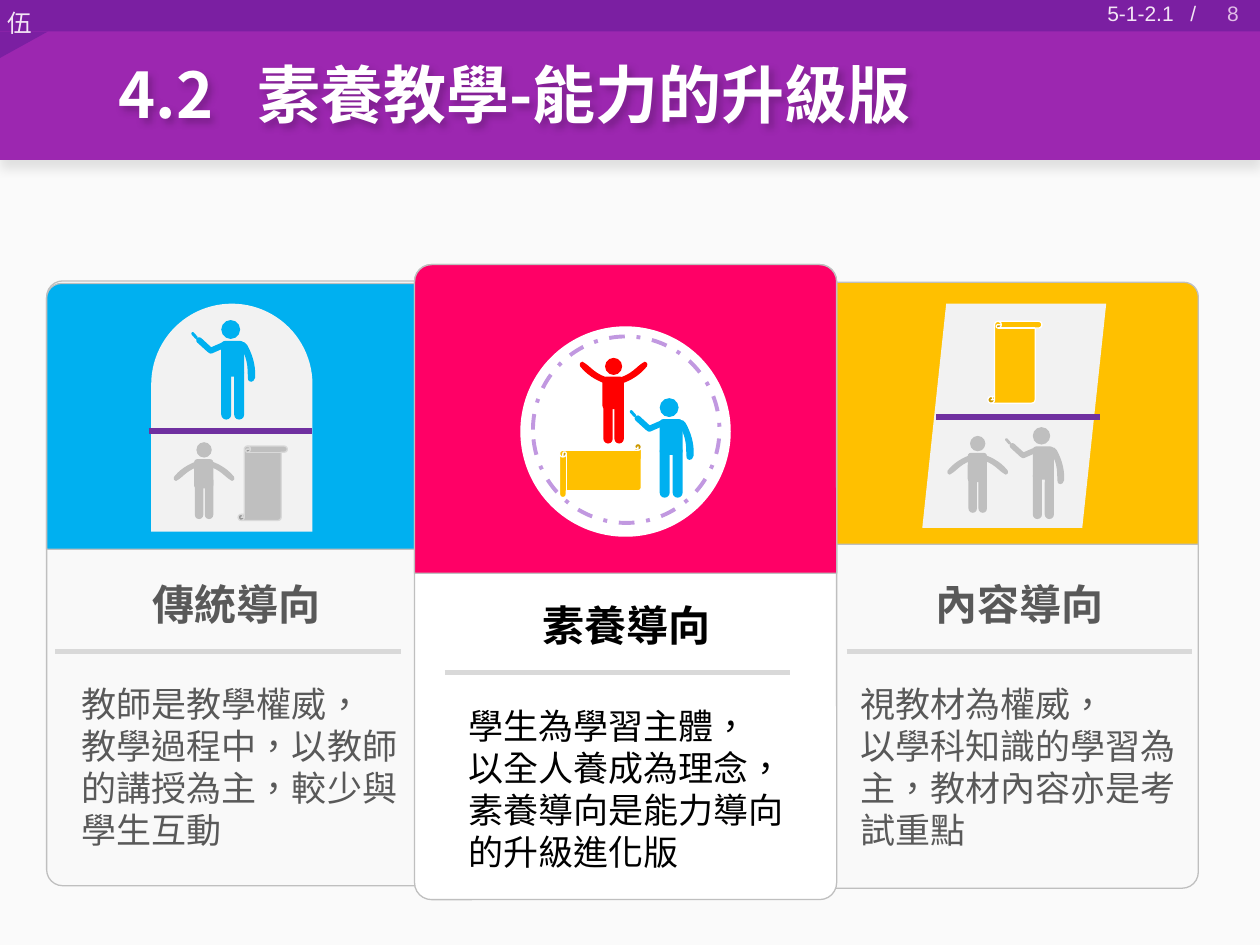
from lxml.etree import SubElement
from pptx import Presentation
from pptx.dml.color import RGBColor
from pptx.enum.dml import MSO_LINE
from pptx.enum.lang import MSO_LANGUAGE_ID as Language
from pptx.enum.shapes import MSO_CONNECTOR, MSO_SHAPE as Preset
from pptx.enum.text import MSO_ANCHOR as Anchor, MSO_AUTO_SIZE, PP_ALIGN as Align
from pptx.oxml.ns import qn
from pptx.util import Inches, Pt

COLORS = {
    "paper": "FAFAFA", "white": "FFFFFF", "banner": "9C27B0", "strip": "7B1FA2",
    "pale": "F3E5F5", "number": "E1BEE7", "card": "F9F9F9", "border": "BFBFBF",
    "rule": "D9D9D9", "panel": "F2F2F2", "text": "595959", "black": "000000",
    "blue": "00B0F0", "amber": "FFC000", "pink": "FF0066", "red": "FF0000",
    "divider": "7030A0", "ring": "C198E0",
}
WIDTH, HEIGHT = Inches(10), Inches(7.5)
CELL = WIDTH / 100
CJK = "Noto Sans CJK SC"

# Shares of a figure's height, measured from its middle and top
STUDENT_PARTS = [
    (Preset.FLOWCHART_CONNECTOR, (-.1, 0, .2, .2), 0),
    (Preset.ROUNDED_RECTANGLE, (-.13, .22, .25, .38), 0),
    (Preset.ROUNDED_RECTANGLE, (.01, .44, .11, .56), 0),
    (Preset.ROUNDED_RECTANGLE, (-.12, .44, .11, .56), 0),
]
TEACHER_PARTS = [
    (Preset.FLOWCHART_CONNECTOR, (-.1, 0, .19, .19), 0),
    (Preset.ROUNDED_RECTANGLE, (-.1, .21, .23, .36), 0),
    (Preset.ROUNDED_RECTANGLE, (.03, .48, .1, .52), 0),
    (Preset.ROUNDED_RECTANGLE, (-.1, .48, .1, .52), 0),
    (Preset.ROUNDED_RECTANGLE, (-.3, .15, .06, .2), 312.3),
    (Preset.ROUNDED_RECTANGLE, (-.17, .18, .06, .2), 66.4),
    (Preset.ROUNDED_RECTANGLE, (-.41, .14, .08, .03), 48.6),
]
RAISED_ARM = [
    (.04, .24), (.01, .25), (.01, .26), (.01, .28), (.01, .31), (.05, .31), (.07, .31),
    (.29, .24), (.37, .12), (.39, .1), (.39, .09), (.4, .07), (.39, .06),
    (.37, .04), (.36, .04), (.34, .06), (.27, .1), (.21, .2), (.04, .24),
]
TEACHER_ARM = [
    (.1, .28), (.08, .25), (.08, .23), (.1, .22), (.12, .21), (.15, .23), (.16, .25),
    (.26, .43), (.24, .57), (.24, .58), (.23, .61), (.22, .62), (.2, .62),
    (.19, .62), (.17, .61), (.17, .6), (.16, .5), (.18, .42), (.1, .28),
]


def rgb(name):
    """Return the named colour."""
    return RGBColor.from_string(COLORS[name])


def cells(*values):
    """Turn grid cells into slide lengths."""
    return [round(value * CELL) for value in values]


def paint(shape, fill=None, line=None, weight=.75):
    """Set fill and outline and take the shadow off."""
    shape.shadow.inherit = False
    if fill:
        shape.fill.solid()
        shape.fill.fore_color.rgb = rgb(fill)
    else:
        shape.fill.background()
    if line:
        shape.line.color.rgb = rgb(line)
        shape.line.width = Pt(weight)
    else:
        shape.line.fill.background()
    return shape


def add_shape(canvas, preset, box, fill=None, adjust=(), turn=0, **outline):
    """Add a painted preset shape on the grid."""
    shape = paint(canvas.add_shape(preset, *cells(*box)), fill, **outline)
    for index, value in enumerate(adjust):
        shape.adjustments[index] = value
    shape.rotation = turn
    return shape


def add_line(canvas, start, end, color):
    """Add a straight 3 pt line."""
    line = canvas.add_connector(MSO_CONNECTOR.STRAIGHT, *cells(*start, *end))
    line.line.color.rgb = rgb(color)
    line.line.width = Pt(3)
    SubElement(line.element.spPr, qn("a:effectLst"))


def add_shadow(shape, alpha, blur, distance, angle):
    """Give a shape a soft black shadow."""
    shape.shadow.inherit = False
    effects = shape.element.spPr.find(qn("a:effectLst"))
    outer = SubElement(effects, qn("a:outerShdw"), blurRad=str(Pt(blur)), dist=str(Pt(distance)),
                       dir=str(angle * 60000), algn="t", rotWithShape="0")
    black = SubElement(outer, qn("a:srgbClr"), val=COLORS["black"])
    SubElement(black, qn("a:alpha"), val=str(alpha * 1000))


def write(shape, text, size, color, font=CJK, bold=False, align=Align.LEFT,
          anchor=Anchor.TOP, wrap=True, tab=None):
    """Write formatted paragraphs into a shape, with an optional tab stop in cells."""
    frame = shape.text_frame
    frame.word_wrap, frame.vertical_anchor = wrap, anchor
    frame.auto_size = MSO_AUTO_SIZE.NONE
    frame.text = text
    for para in frame.paragraphs:
        para.alignment, para.line_spacing = align, Pt(round(size * 1.2))
        if tab:
            stops = SubElement(para._p.get_or_add_pPr(), qn("a:tabLst"))
            SubElement(stops, qn("a:tab"), pos=str(round(tab * CELL)), algn="l")
        for span in para.runs:
            span.font.name, span.font.size, span.font.bold = font, Pt(size), bold
            span.font.color.rgb = rgb(color)
            span.font.language_id = Language.TRADITIONAL_CHINESE
            SubElement(span.font._element, qn("a:ea"), typeface=font)


def add_text(canvas, box, text, size, color, **style):
    """Add a text box on the grid."""
    write(canvas.add_textbox(*cells(*box)), text, size, color, **style)


def add_outline(canvas, points, fill, curved=False):
    """Add a closed outline; a curved one takes its points in threes as Bézier knots."""
    corners = [cells(*point) for point in points]
    builder = canvas.build_freeform(*corners[0])
    builder.add_line_segments(corners[1:])
    shape = paint(builder.convert_to_shape(), fill)
    if curved:
        sides = list(shape.element.iter(qn("a:lnTo")))[:len(points) - 1]
        for first in range(0, len(sides), 3):
            curve = SubElement(sides[first].getparent(), qn("a:cubicBezTo"))
            sides[first].addprevious(curve)
            for side in sides[first:first + 3]:
                curve.append(side[0])
                side.getparent().remove(side)


def add_figure(canvas, middle, top, height, color, parts, arms):
    """Draw a person of the given height around a middle line."""
    for preset, (x, y, w, h), turn in parts:
        adjust = (.5,) if w < .12 else ()
        box = (middle + x * height, top + y * height, w * height, h * height)
        add_shape(canvas, preset, box, color, adjust, turn)
    for arm in arms:
        points = [(middle + x * height, top + y * height) for x, y in arm]
        add_outline(canvas, points, color, curved=True)


def add_student(canvas, middle, top, height, color, raised=False):
    """Draw a student with arms raised or lowered."""
    arm = RAISED_ARM if raised else [(x, .55 - y) for x, y in RAISED_ARM]
    arms = [[(side * x, y) for x, y in arm] for side in (-1, 1)]
    add_figure(canvas, middle, top, height, color, STUDENT_PARTS, arms)


def add_teacher(canvas, middle, top, height, color):
    """Draw a teacher holding a pointer."""
    add_figure(canvas, middle, top, height, color, TEACHER_PARTS, [TEACHER_ARM])


def draw_tradition(canvas, x, y):
    """Draw the teacher above a student and a scroll."""
    add_shape(canvas, Preset.ROUND_2_SAME_RECTANGLE, (x + 8.3, y + 1.8, 12.8, 18.1), "panel", (.5, 0))
    add_student(canvas, x + 12.5, y + 12.8, 6.1, "border")
    add_shape(canvas, Preset.VERTICAL_SCROLL, (x + 15.2, y + 13.1, 3.9, 5.9), "border", line="rule")
    add_teacher(canvas, x + 14.65, y + 3.1, 7.9, "blue")
    add_line(canvas, (x + 8.1, y + 11.9), (x + 21.1, y + 11.9), "divider")


def draw_content(canvas, x, y):
    """Draw the scroll above a student and a teacher."""
    add_shape(canvas, Preset.PARALLELOGRAM, (x + 10, y + 1.6, 14.6, 17.8), "panel", (.13,))
    add_shape(canvas, Preset.VERTICAL_SCROLL, (x + 15.2, y + 3, 4.3, 6.5), "amber", line="white")
    add_teacher(canvas, x + 19.5, y + 11.4, 7.3, "border")
    add_student(canvas, x + 14.4, y + 12.1, 6.1, "border")
    add_line(canvas, (x + 11.1, y + 10.6), (x + 24.1, y + 10.6), "divider")


def draw_literacy(canvas, x, y):
    """Draw student, teacher and scroll together in a ring."""
    add_shape(canvas, Preset.OVAL, (x + 8.4, y + 4.9, 16.7, 16.7), "white")
    scroll = add_shape(canvas, Preset.VERTICAL_SCROLL, (x + 12.6, y + 13.1, 4.3, 6.5),
                       "amber", turn=270, line="white")
    scroll.element.spPr.find(qn("a:xfrm")).set("flipH", "1")
    add_student(canvas, x + 15.8, y + 7.4, 6.8, "red", raised=True)
    add_teacher(canvas, x + 20.25, y + 10.6, 7.9, "blue")
    ring = add_shape(canvas, Preset.OVAL, (x + 9.4, y + 5.7, 14.8, 14.8), line="ring", weight=2.25)
    ring.line.dash_style = MSO_LINE.DASH_DOT


def add_card(page, box, header, fill, title, body, draw, heading, margin, indent,
             back="card", color="text"):
    """Place a card: header picture, heading, rule and body text."""
    canvas = page.shapes.add_group_shape().shapes
    x, y, w, h = box
    drop, depth = header
    across, down = heading
    top, left = y + down, x + margin
    add_shape(canvas, Preset.ROUNDED_RECTANGLE, box, back, (.04,), line="border")
    add_shape(canvas, Preset.ROUND_2_SAME_RECTANGLE, (x, y + drop, w, depth), fill, (.055, 0), line="border")
    draw(canvas, x, y)
    add_text(canvas, (x + across, top, 15.5, 5), title, 24, color, bold=True, align=Align.CENTER, wrap=False)
    add_line(canvas, (left, top + 6.3), (left + 27.4, top + 6.3), "rule")
    add_text(canvas, (x + indent, top + 8.3, 28.6, 14.5), body, 20, color)


def add_banner(page, title, chapter, code, number):
    """Place the backdrop, the banner and its labels."""
    canvas = page.shapes
    add_shape(canvas, Preset.RECTANGLE, (0, 4.4, 100, 70.6), "paper")
    band = add_shape(canvas, Preset.RECTANGLE, (0, 0, 100, 12.7), "banner")
    add_shadow(band, 10, 6, 4, 90)
    add_shape(canvas, Preset.RECTANGLE, (0, 0, 100, 2.5), "strip")
    add_outline(canvas, [(0, 2.5), (0, 4.6), (3.8, 2.5)], "strip")
    add_text(canvas, (-.4, .1, 4, 3.4), chapter, 14, "pale", wrap=False)
    add_text(canvas, (76, -.9, 23.3, 4), number, 12, "number", font="Arial",
             align=Align.RIGHT, anchor=Anchor.MIDDLE)
    add_text(canvas, (86.9, -.4, 9.6, 3), code, 12, "pale", font="Arial", tab=6.6)
    heading = canvas.title
    heading.left, heading.top, heading.width, heading.height = cells(8.4, 2.1, 86.5, 10.6)
    write(heading, title, 36, "white", bold=True, anchor=Anchor.MIDDLE, tab=11)
    add_shadow(heading, 20, 4, 3, 45)
    canvas.element.append(heading.element)


def main():
    """Build the deck."""
    deck = Presentation()
    deck.slide_width, deck.slide_height = WIDTH, HEIGHT
    page = deck.slides.add_slide(deck.slide_layouts[5])
    add_banner(page, "4.2\t素養教學-能力的升級版", "伍", "5-1-2.1\t/", "8")
    add_card(page, (63.2, 22.5, 31.9, 48), (-.1, 20.8), "amber", "內容導向",
             "視教材為權威，\n以學科知識的學習為主，教材內容亦是考試重點",
             draw_content, heading=(10, 22.9), margin=4, indent=4.1)
    add_card(page, (3.7, 22.3, 31.9, 48), (.2, 21.1), "blue", "傳統導向",
             "教師是教學權威，\n教學過程中，以教師的講授為主，較少與學生互動",
             draw_tradition, heading=(7.3, 23.1), margin=.7, indent=1.8)
    add_card(page, (32.9, 21, 33.5, 50.4), (0, 24.5), "pink", "素養導向",
             "學生為學習主體，\v以全人養成為理念，素養導向是能力導向的升級進化版",
             draw_literacy, heading=(9.1, 26.1), margin=2.4, indent=3.3, back="white", color="black")
    deck.save("out.pptx")


if __name__ == "__main__":
    main()
